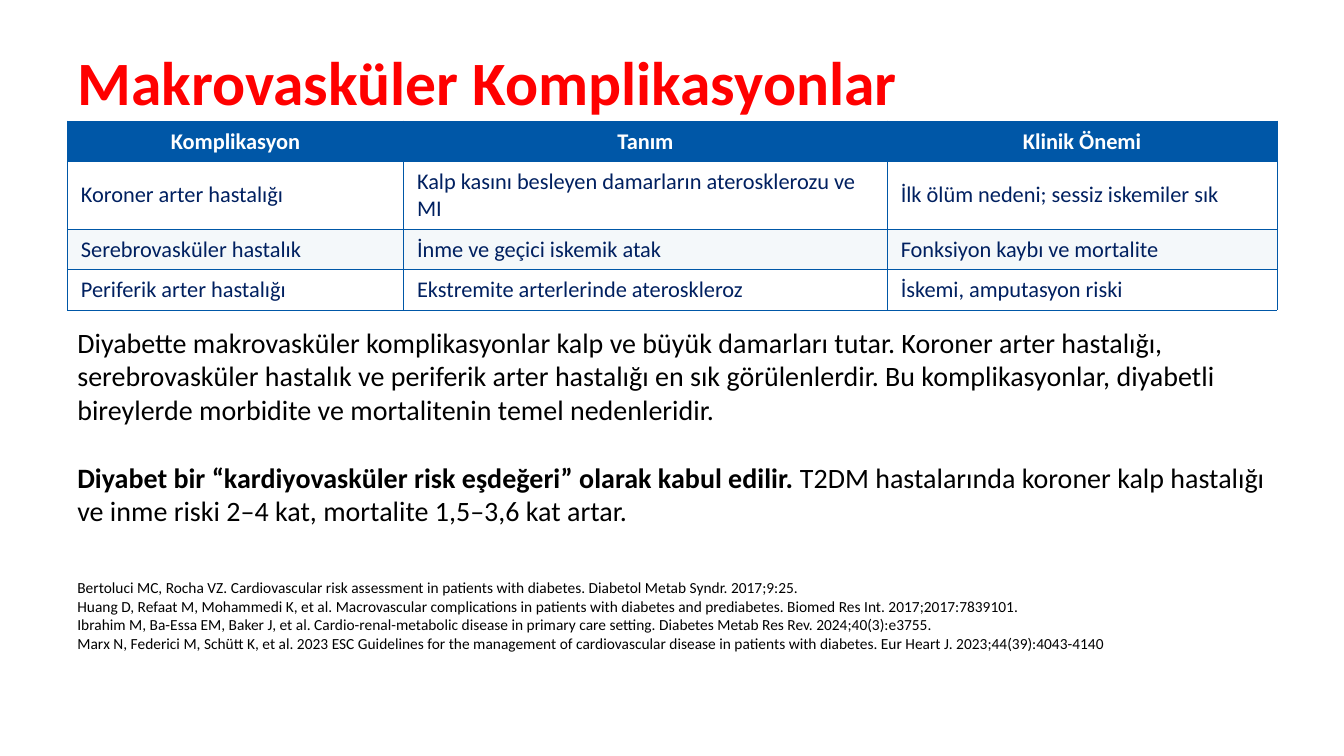
from lxml import etree
from pptx import Presentation
from pptx.dml.color import RGBColor
from pptx.enum.text import MSO_ANCHOR, PP_ALIGN
from pptx.oxml.ns import qn
from pptx.util import Cm, Pt


def color(value):
    return RGBColor.from_string(value)


def add_run(paragraph, text, size, ink, bold=False):
    run = paragraph.add_run()
    run.text = text
    font_format = {"name": "Calibri", "size": Pt(size), "bold": bold}
    for attribute, value in font_format.items():
        setattr(run.font, attribute, value)
    run.font.color.rgb = color(ink)


presentation = Presentation()
presentation.slide_width = Cm(33.87)
presentation.slide_height = Cm(19.05)
slide = presentation.slides.add_slide(presentation.slide_layouts[6])

left, width = 1.7, 30.48
title = [[("Makrovasküler Komplikasyonlar", True)]]
summary = [
    [("Diyabette makrovasküler komplikasyonlar kalp ve büyük damarları tutar. "
      "Koroner arter hastalığı, serebrovasküler hastalık ve periferik arter hastalığı "
      "en sık görülenlerdir. Bu komplikasyonlar, diyabetli bireylerde morbidite ve "
      "mortalitenin temel nedenleridir.", False)],
    [("Diyabet bir “kardiyovasküler risk eşdeğeri” olarak kabul edilir. ", True),
     ("T2DM hastalarında koroner kalp hastalığı ve inme riski 2–4 kat, "
      "mortalite 1,5–3,6 kat artar.", False)],
]
references = [
    [("Bertoluci MC, Rocha VZ. Cardiovascular risk assessment in patients with diabetes. "
      "Diabetol Metab Syndr. 2017;9:25.", False)],
    [("Huang D, Refaat M, Mohammedi K, et al. Macrovascular complications in patients with "
      "diabetes and prediabetes. Biomed Res Int. 2017;2017:7839101.", False)],
    [("Ibrahim M, Ba-Essa EM, Baker J, et al. Cardio-renal-metabolic disease in primary care "
      "setting. Diabetes Metab Res Rev. 2024;40(3):e3755.", False)],
    [("Marx N, Federici M, Schütt K, et al. 2023 ESC Guidelines for the management of "
      "cardiovascular disease in patients with diabetes. Eur Heart J. "
      "2023;44(39):4043-4140", False)],
]

sections = [
    (title, 1.02, 2.03, 44, "FF0000", MSO_ANCHOR.MIDDLE, 0),
    (summary, 8.07, 5.4, 20, "000000", MSO_ANCHOR.TOP, 24.4),
    (references, 14.45, 2.2, 11, "000000", MSO_ANCHOR.TOP, 0),
]
for paragraphs, top, height, size, ink, anchor, gap in sections:
    frame = slide.shapes.add_textbox(Cm(left), Cm(top), Cm(width), Cm(height)).text_frame
    frame.word_wrap = True
    frame.vertical_anchor = anchor
    for index, runs in enumerate(paragraphs):
        paragraph = frame.add_paragraph() if index else frame.paragraphs[0]
        paragraph.space_before = Pt(gap if index else 0)
        for text, bold in runs:
            add_run(paragraph, text, size, ink, bold)

complications = [
    ("Komplikasyon", "Tanım", "Klinik Önemi"),
    ("Koroner arter hastalığı", "Kalp kasını besleyen damarların aterosklerozu ve MI",
     "İlk ölüm nedeni; sessiz iskemiler sık"),
    ("Serebrovasküler hastalık", "İnme ve geçici iskemik atak",
     "Fonksiyon kaybı ve mortalite"),
    ("Periferik arter hastalığı", "Ekstremite arterlerinde ateroskleroz",
     "İskemi, amputasyon riski"),
]
column_widths = [8.47, 12.19, 9.82]
row_heights = [1.02, 1.7, 1.02, 1.02]
row_fills = ["0057A7", "FFFFFF", "F4F8FA", "FFFFFF"]
cell_format = {
    "margin_left": Cm(0.34), "margin_right": Cm(0.34),
    "margin_top": Cm(0.17), "margin_bottom": Cm(0.17),
    "vertical_anchor": MSO_ANCHOR.MIDDLE,
}
table = slide.shapes.add_table(
    len(complications), len(column_widths),
    Cm(left), Cm(3.05), Cm(width), Cm(sum(row_heights))).table
for column, column_width in zip(table.columns, column_widths):
    column.width = Cm(column_width)

for row_index, labels in enumerate(complications):
    is_header = row_index == 0
    table.rows[row_index].height = Cm(row_heights[row_index])
    for column_index, label in enumerate(labels):
        cell = table.cell(row_index, column_index)
        for attribute, value in cell_format.items():
            setattr(cell, attribute, value)
        properties = cell._tc.get_or_add_tcPr()
        for side in ("a:lnL", "a:lnR", "a:lnT", "a:lnB"):
            border = etree.SubElement(properties, qn(side), w=str(Pt(0.5)))
            border_fill = etree.SubElement(border, qn("a:solidFill"))
            etree.SubElement(border_fill, qn("a:srgbClr"), val="0057A7")
        cell.fill.solid()
        cell.fill.fore_color.rgb = color(row_fills[row_index])
        paragraph = cell.text_frame.paragraphs[0]
        paragraph.alignment = PP_ALIGN.CENTER if is_header else PP_ALIGN.LEFT
        add_run(paragraph, label, 16, "FFFFFF" if is_header else "002060", is_header)

presentation.save("out.pptx")
